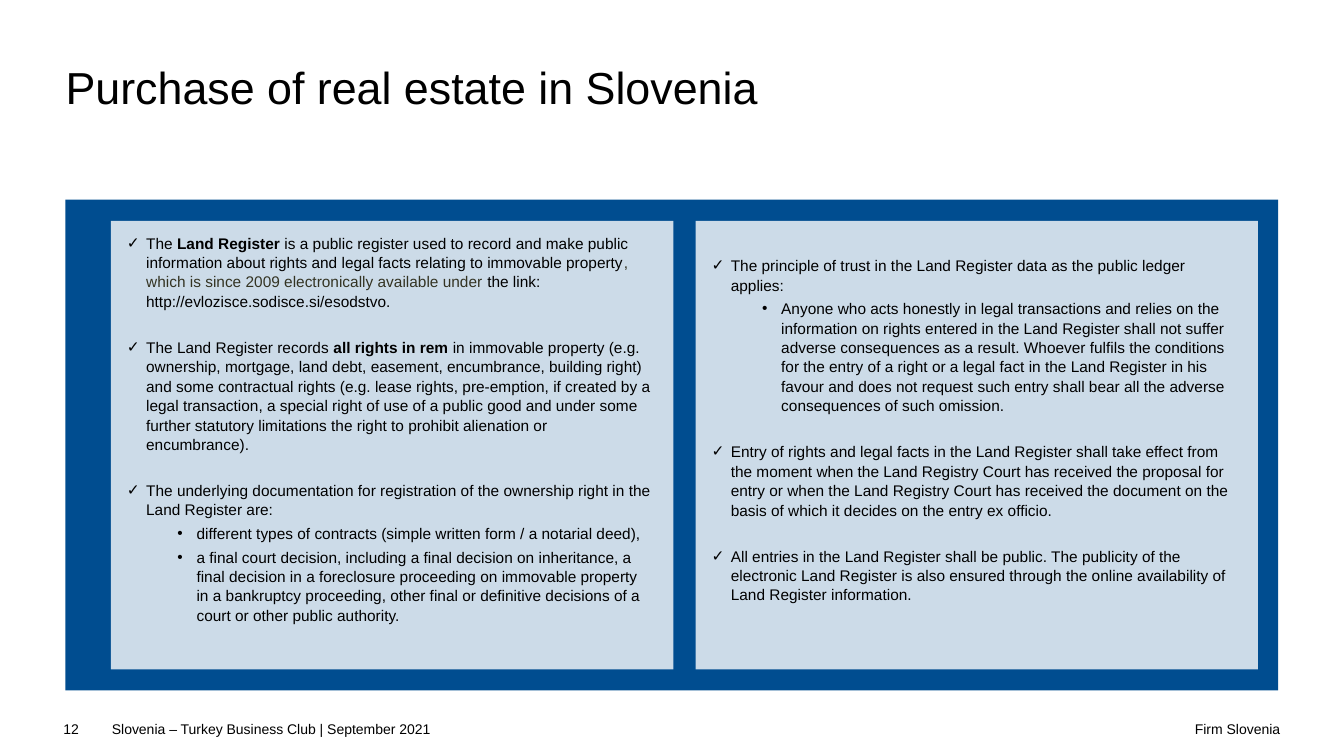
from collections import namedtuple

from lxml.etree import SubElement
from pptx import Presentation
from pptx.dml.color import RGBColor
from pptx.enum.shapes import MSO_SHAPE
from pptx.enum.text import MSO_ANCHOR, MSO_AUTO_SIZE, PP_ALIGN
from pptx.oxml.ns import qn
from pptx.util import Inches, Pt

BLACK = RGBColor(0x00, 0x00, 0x00)
WHITE = RGBColor(0xFF, 0xFF, 0xFF)
NAVY = RGBColor(0x00, 0x4D, 0x90)
OLIVE = RGBColor(0x33, 0x33, 0x22)

CELL = Inches(0.1)
COLUMNS, ROWS = 133.33, 75
Box = namedtuple("Box", "left top width height")

TITLE_BOX = Box(6.5, 6.5, 120.3, 9.8)
BAND_BOX = Box(6.5, 19.8, 120.3, 48.7)
FOOTER_BOX = Box(6.3, 71.5, 120.7, 2.8)

FONT = {"name": "Arial", "bold": False}
ITEM_SPACING = {"space_before": Pt(0), "space_after": Pt(3), "line_spacing": 1.05}
BLANK_LINE = 1.6
GAP = Pt(16)
INDENT = Inches(0.19)
BULLETS = [("✓", INDENT), ("•", Inches(0.69))]

Item = namedtuple("Item", "level gap_before runs")
BOLD = {"bold": True}

LEFT_ITEMS = [
    Item(0, False, [
        ("The ", {}),
        ("Land Register ", BOLD),
        ("is a public register used to record and make public information about "
         "rights and legal facts relating to immovable property", {}),
        (", which is since 2009 electronically available under ", {"color": OLIVE}),
        ("the link: http://evlozisce.sodisce.si/esodstvo.", {}),
    ]),
    Item(0, True, [
        ("The Land Register records ", {}),
        ("all rights in rem ", BOLD),
        ("in immovable property (e.g. ownership, mortgage, land debt, easement, "
         "encumbrance, building right) and some contractual rights (e.g. lease rights, "
         "pre-emption, if created by a legal transaction, a special right of use of a "
         "public good and under some further statutory limitations the right to "
         "prohibit alienation or encumbrance).", {}),
    ]),
    Item(0, True, [
        ("The underlying documentation for registration of the ownership right in the "
         "Land Register are:", {}),
    ]),
    Item(1, False, [
        ("different types of contracts (simple written form / a notarial deed),", {}),
    ]),
    Item(1, False, [
        ("a final court decision, including a final decision on inheritance, a final "
         "decision in a foreclosure proceeding on immovable property in a bankruptcy "
         "proceeding, other final or definitive decisions of a court or other public "
         "authority.", {}),
    ]),
]

RIGHT_ITEMS = [
    Item(0, False, [
        ("The principle of trust in the Land Register data as the public ledger "
         "applies:", {}),
    ]),
    Item(1, False, [
        ("Anyone who acts honestly in legal transactions and relies on the information "
         "on rights entered in the Land Register shall not suffer adverse consequences "
         "as a result. Whoever fulfils the conditions for the entry of a right or a "
         "legal fact in the Land Register in his favour and does not request such entry "
         "shall bear all the adverse consequences of such omission.", {}),
    ]),
    Item(0, True, [
        ("Entry of rights and legal facts in the Land Register shall take effect from "
         "the moment when the Land Registry Court has received the proposal for entry "
         "or when the Land Registry Court has received the document on the basis of "
         "which it decides on the entry ex officio.", {}),
    ]),
    Item(0, True, [
        ("All entries in the Land Register shall be public. The publicity of the "
         "electronic Land Register is also ensured through the online availability of "
         "Land Register information.", {}),
    ]),
]


def apply_format(target, values):
    """Set each attribute of the target from a dict of values."""
    for name, value in values.items():
        setattr(target, name, value)


def to_lengths(box):
    """Turn a box in grid cells into slide lengths."""
    return {name: round(value * CELL) for name, value in box._asdict().items()}


def add_run(paragraph, text, size, color=BLACK, **values):
    """Append a formatted run to a paragraph."""
    run = paragraph.add_run()
    run.text = text
    apply_format(run.font, {**FONT, "size": Pt(size), **values})
    run.font.color.rgb = color


def set_frame(frame, left=0, top=0, right=0, bottom=0):
    """Wrap a text frame from the top with margins in grid cells."""
    apply_format(frame, {
        "word_wrap": True,
        "auto_size": MSO_AUTO_SIZE.NONE,
        "vertical_anchor": MSO_ANCHOR.TOP,
        "margin_left": round(left * CELL),
        "margin_top": round(top * CELL),
        "margin_right": round(right * CELL),
        "margin_bottom": round(bottom * CELL),
    })


def set_bullet(paragraph, level):
    """Give a paragraph the bullet and hanging indent of its level."""
    character, margin = BULLETS[level]
    properties = paragraph._p.get_or_add_pPr()
    properties.set("marL", str(margin))
    properties.set("indent", str(-INDENT))
    SubElement(properties, qn("a:buFont")).set("typeface", FONT["name"])
    SubElement(properties, qn("a:buChar")).set("char", character)


def fill_title(shape, box, text):
    """Place the title and write its text."""
    apply_format(shape, to_lengths(box))
    set_frame(shape.text_frame)
    paragraph = shape.text_frame.paragraphs[0]
    apply_format(paragraph, {"alignment": PP_ALIGN.LEFT, "line_spacing": 0.9})
    add_run(paragraph, text, 32)


def fill_panel(shape, box, items, lead):
    """Place a translucent panel and list its items below a lead space."""
    apply_format(shape, to_lengths(box))
    shape.fill.solid()
    shape.fill.fore_color.rgb = WHITE
    color = shape.element.spPr.find(f".//{qn('a:srgbClr')}")
    SubElement(color, qn("a:alpha")).set("val", "80000")
    frame = shape.text_frame
    set_frame(frame, 1.6, 1.2 + lead, 2, 1.2)
    for index, item in enumerate(items):
        paragraph = frame.add_paragraph() if index else frame.paragraphs[0]
        apply_format(paragraph, {**ITEM_SPACING, "level": item.level})
        if item.gap_before:
            paragraph.space_before = GAP
        set_bullet(paragraph, item.level)
        for text, values in item.runs:
            add_run(paragraph, text, 11, **values)


def add_band(slide, box, panels):
    """Draw the navy band behind two equally spaced panels."""
    band = slide.shapes.add_shape(MSO_SHAPE.RECTANGLE, **to_lengths(box))
    band.shadow.inherit = False
    band.fill.solid()
    band.fill.fore_color.rgb = NAVY
    band.line.fill.background()
    band.element.getparent().insert(2, band.element)
    for index, (shape, items, lead) in enumerate(panels):
        panel_box = Box(box.left + 4.5 + 58 * index, box.top + 2.1, 55.8, 44.5)
        fill_panel(shape, panel_box, items, lead)


def add_footer(slide, box):
    """Write the slide number, event and company along the footer."""
    parts = [
        ("12", 0, 4.7, PP_ALIGN.LEFT),
        ("Slovenia – Turkey Business Club | September 2021", 4.8, 55.5, PP_ALIGN.LEFT),
        ("Firm Slovenia", 60.4, 60.3, PP_ALIGN.RIGHT),
    ]
    for text, offset, width, alignment in parts:
        part_box = Box(box.left + offset, box.top, width, box.height)
        shape = slide.shapes.add_textbox(**to_lengths(part_box))
        set_frame(shape.text_frame)
        paragraph = shape.text_frame.paragraphs[0]
        paragraph.alignment = alignment
        add_run(paragraph, text, 10)


def main():
    """Build the slide and save the presentation."""
    presentation = Presentation()
    presentation.slide_width = round(COLUMNS * CELL)
    presentation.slide_height = ROWS * CELL
    slide = presentation.slides.add_slide(presentation.slide_layouts[3])
    title, left, right = slide.placeholders
    fill_title(title, TITLE_BOX, "Purchase of real estate in Slovenia")
    add_band(slide, BAND_BOX, [(left, LEFT_ITEMS, 0), (right, RIGHT_ITEMS, 1.4 * BLANK_LINE)])
    add_footer(slide, FOOTER_BOX)
    presentation.save("out.pptx")


if __name__ == "__main__":
    main()
